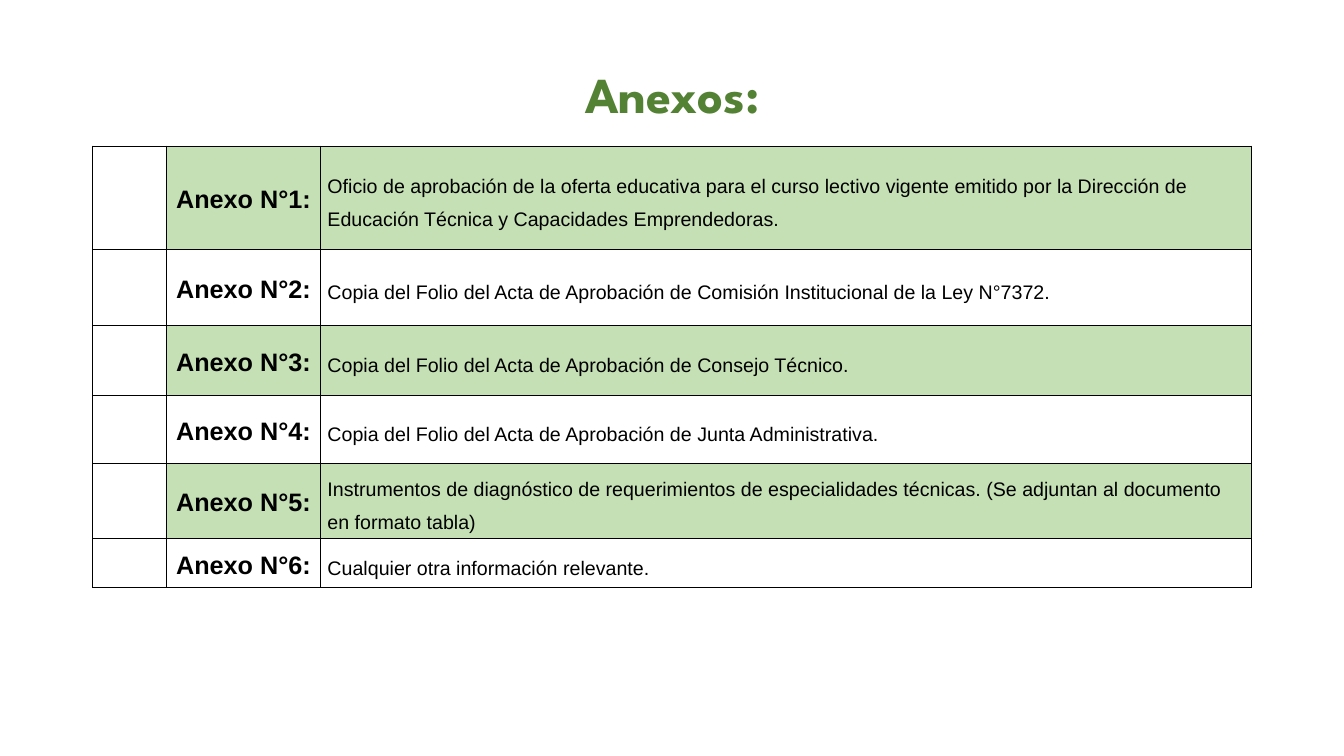
from lxml import etree
from pptx import Presentation
from pptx.dml.color import RGBColor
from pptx.enum.text import MSO_ANCHOR as Anchor, PP_ALIGN as Align
from pptx.oxml.ns import qn
from pptx.util import Pt

# Content
TITLE = "Anexos:"
ANNEXES = [
    "Oficio de aprobación de la oferta educativa para el curso lectivo vigente emitido por "
    "la Dirección de Educación Técnica y Capacidades Emprendedoras.",
    "Copia del Folio del Acta de Aprobación de Comisión Institucional de la Ley N°7372.",
    "Copia del Folio del Acta de Aprobación de Consejo Técnico.",
    "Copia del Folio del Acta de Aprobación de Junta Administrativa.",
    "Instrumentos de diagnóstico de requerimientos de especialidades técnicas. "
    "(Se adjuntan al documento en formato tabla)",
    "Cualquier otra información relevante.",
]

# Layout in points
SLIDE_WIDTH, SLIDE_HEIGHT = 960, 540
LEFT, WIDTH = 66.24, 828
TITLE_TOP, TITLE_HEIGHT = 17.3, 104.4
TABLE_TOP = 104.5
COLUMN_WIDTHS = [52.7, 110, 665.3]
ROW_HEIGHTS = [73.8, 54, 50, 48.8, 53.8, 35]
CELL_MARGIN = 5

# Colours
TITLE_GREEN = RGBColor(0x54, 0x82, 0x35)
BAND_GREEN = RGBColor(0xC5, 0xE0, 0xB4)
WHITE = RGBColor(0xFF, 0xFF, 0xFF)
BLACK = RGBColor(0, 0, 0)


def write_text(frame, text, *, size, font="Arial", color=BLACK, bold=False,
               align=Align.LEFT, line_spacing=1.0, space_after=0):
    frame.word_wrap = True
    paragraph = frame.paragraphs[0]
    paragraph.alignment = align
    paragraph.line_spacing = line_spacing
    paragraph.space_after = Pt(space_after)
    run = paragraph.add_run()
    run.text = text
    run.font.name = font
    run.font.size = Pt(size)
    run.font.bold = bold
    run.font.color.rgb = color


def format_cell(cell, fill):
    """Set the margins, black borders and fill of a table cell."""
    cell.vertical_anchor = Anchor.MIDDLE
    cell.margin_left = cell.margin_right = Pt(CELL_MARGIN)
    cell.margin_top = cell.margin_bottom = 0
    properties = cell._tc.get_or_add_tcPr()
    for side in ("a:lnL", "a:lnR", "a:lnT", "a:lnB"):
        line = etree.SubElement(properties, qn(side), w=str(Pt(1)))
        solid = etree.SubElement(line, qn("a:solidFill"))
        etree.SubElement(solid, qn("a:srgbClr"), val=str(BLACK))
    cell.fill.solid()
    cell.fill.fore_color.rgb = fill


presentation = Presentation()
presentation.slide_width, presentation.slide_height = Pt(SLIDE_WIDTH), Pt(SLIDE_HEIGHT)
slide = presentation.slides.add_slide(presentation.slide_layouts[6])

# Title
title = slide.shapes.add_textbox(Pt(LEFT), Pt(TITLE_TOP), Pt(WIDTH), Pt(TITLE_HEIGHT))
title.text_frame.vertical_anchor = Anchor.MIDDLE
write_text(title.text_frame, TITLE, size=36, font="League Spartan", color=TITLE_GREEN,
           bold=True, align=Align.CENTER, line_spacing=0.9)

# Table of annexes
table = slide.shapes.add_table(len(ANNEXES), len(COLUMN_WIDTHS), Pt(LEFT), Pt(TABLE_TOP),
                               Pt(WIDTH), Pt(sum(ROW_HEIGHTS))).table
table.first_row = table.horz_banding = False
for column, width in zip(table.columns, COLUMN_WIDTHS):
    column.width = Pt(width)

for index, (description, height) in enumerate(zip(ANNEXES, ROW_HEIGHTS)):
    row = table.rows[index]
    row.height = Pt(height)
    band = WHITE if index % 2 else BAND_GREEN
    check_cell, label_cell, description_cell = row.cells
    for cell, fill in ((check_cell, WHITE), (label_cell, band), (description_cell, band)):
        format_cell(cell, fill)
    write_text(label_cell.text_frame, f"Anexo N°{index + 1}:", size=18, bold=True,
               align=Align.CENTER, line_spacing=1.15, space_after=6)
    write_text(description_cell.text_frame, description, size=14,
               line_spacing=1.5, space_after=6)

presentation.save("out.pptx")
